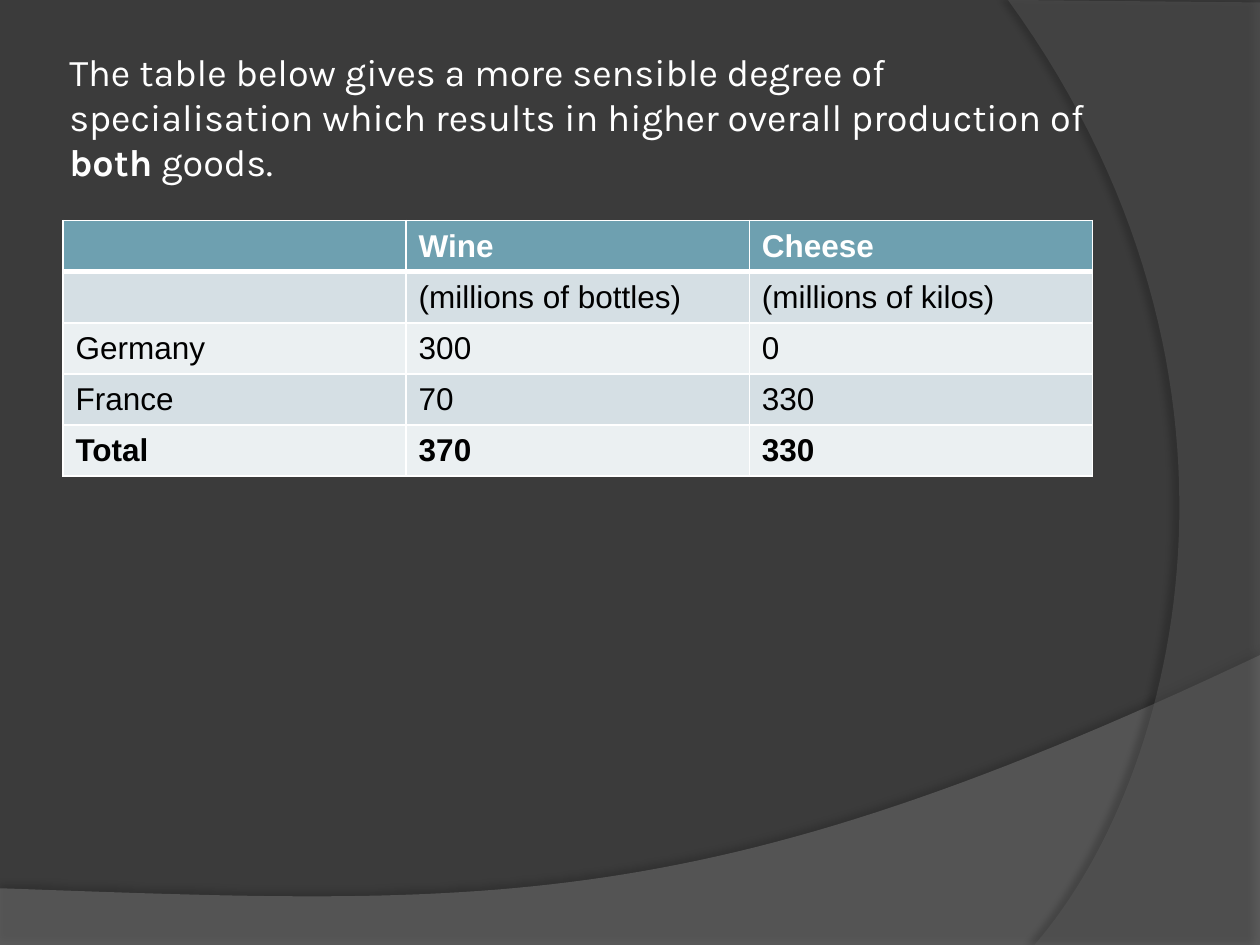
from dataclasses import dataclass

from lxml import etree
from pptx import Presentation
from pptx.dml.color import RGBColor
from pptx.enum import text
from pptx.oxml import ns
from pptx.util import Inches, Pt

COLORS = {
    "background": "3B3B3B", "wave": "7F7F7F", "arc": "5E5E5E", "shadow": "000000",
    "light": "FFFFFF", "dark": "000000",
    "header": "6EA0B0", "odd": "D5DFE4", "even": "EBF0F2",
}
ROWS = [
    ("", "Wine", "Cheese"),
    ("", "(millions of bottles)", "(millions of kilos)"),
    ("Germany", "300", "0"),
    ("France", "70", "330"),
    ("Total", "370", "330"),
]
CURVE_STEPS = 60


@dataclass
class Swoosh:
    """A translucent area bounded by one Bezier curve and straight edges."""
    color: str
    opacity: int
    curve: list[tuple[float, float]]
    corners: list[tuple[float, float]]
    shadow_opacity: int
    shadow_distance: float
    shadow_direction: int


SWOOSHES = [
    Swoosh("wave", 45, [(10, 5.2), (5.59, 7.29), (3.91, 7.19), (0, 7.05)],
           [(0, 7.5), (10, 7.5)], 35, 3.5, 270),
    Swoosh("arc", 40, [(8.21, 7.5), (9.35, 6.19), (10.18, 3), (8, 0)],
           [(10, 0.02), (10, 7.5)], 45, 4, 180),
]


def rgb(name: str) -> RGBColor:
    return RGBColor.from_string(COLORS[name])


def add_element(parent, tag: str, **attributes):
    element = etree.SubElement(parent, ns.qn(tag))
    for key, value in attributes.items():
        element.set(key, str(value))
    return element


def add_color(parent, name: str, opacity: int = 100) -> None:
    color = add_element(parent, "a:srgbClr", val=COLORS[name])
    if opacity < 100:
        add_element(color, "a:alpha", val=opacity * 1000)


def bezier_points(curve: list[tuple[float, float]]) -> list[tuple[float, float]]:
    points = []
    for step in range(CURVE_STEPS + 1):
        t = step / CURVE_STEPS
        weights = ((1 - t) ** 3, 3 * t * (1 - t) ** 2, 3 * t ** 2 * (1 - t), t ** 3)
        points.append(tuple(sum(w * p[axis] for w, p in zip(weights, curve))
                            for axis in (0, 1)))
    return points


def add_swoosh(slide, swoosh: Swoosh, depth: int) -> None:
    outline = [(Inches(x), Inches(y))
               for x, y in bezier_points(swoosh.curve) + swoosh.corners]
    builder = slide.shapes.build_freeform(*outline[0])
    builder.add_line_segments(outline[1:], close=True)
    shape = builder.convert_to_shape()
    shape.line.fill.background()
    shape.fill.solid()
    shape.fill.fore_color.rgb = rgb(swoosh.color)
    properties = shape.element.spPr
    fill_color = properties.find(ns.qn("a:solidFill"))[0]
    add_element(fill_color, "a:alpha", val=swoosh.opacity * 1000)
    shadow = add_element(add_element(properties, "a:effectLst"), "a:outerShdw",
                         blurRad=Pt(4), dist=Pt(swoosh.shadow_distance),
                         dir=swoosh.shadow_direction * 60000, rotWithShape=0)
    add_color(shadow, "shadow", swoosh.shadow_opacity)
    # Keep the backdrop behind the title.
    slide.shapes.element.insert(2 + depth, shape.element)


def add_text(paragraph, content: str, *, font: str, size: float, color: str,
             bold: bool = False) -> None:
    run = paragraph.add_run()
    run.text = content
    run.font.name = font
    run.font.size = Pt(size)
    run.font.bold = bold
    run.font.color.rgb = rgb(color)


def set_borders(cell, bottom: float) -> None:
    properties = cell._tc.get_or_add_tcPr()
    widths = {"a:lnL": 1, "a:lnR": 1, "a:lnT": 1, "a:lnB": bottom}
    for position, (tag, width) in enumerate(widths.items()):
        line = add_element(properties, tag, w=Pt(width))
        add_color(add_element(line, "a:solidFill"), "light")
        properties.insert(position, line)


def fill_title(title) -> None:
    title.left, title.top = Inches(0.5), Inches(0.3)
    title.width, title.height = Inches(8.17), Inches(1.25)
    frame = title.text_frame
    frame.auto_size = text.MSO_AUTO_SIZE.NONE
    frame.word_wrap = True
    frame.vertical_anchor = text.MSO_ANCHOR.MIDDLE
    frame.margin_left = frame.margin_right = Inches(0.05)
    frame.margin_top = frame.margin_bottom = Inches(0.05)
    paragraph = frame.paragraphs[0]
    paragraph.alignment = text.PP_ALIGN.LEFT
    style = {"font": "Karla", "size": 21.6, "color": "light"}
    add_text(paragraph, "The table below gives a more sensible degree of specialisation "
             "which results in higher overall production of ", **style)
    add_text(paragraph, "both", bold=True, **style)
    add_text(paragraph, " goods.", **style)


def add_production_table(slide) -> None:
    table = slide.shapes.add_table(len(ROWS), len(ROWS[0]), Inches(0.5), Inches(1.75),
                                   Inches(8.17), Inches(2.03)).table
    for row_index, row in enumerate(ROWS):
        is_header = row_index == 0
        band = "header" if is_header else "odd" if row_index % 2 else "even"
        for column_index, content in enumerate(row):
            cell = table.cell(row_index, column_index)
            cell.fill.solid()
            cell.fill.fore_color.rgb = rgb(band)
            cell.vertical_anchor = text.MSO_ANCHOR.MIDDLE
            set_borders(cell, bottom=3 if is_header else 1)
            if row_index == 1:
                cell._tc.tcPr.find(ns.qn("a:lnT")).set("w", str(Pt(3)))
            if content:
                add_text(cell.text_frame.paragraphs[0], content, font="Arial", size=18,
                         color="light" if is_header else "dark",
                         bold=is_header or row[0] == "Total")


def main() -> None:
    presentation = Presentation()
    presentation.slide_width, presentation.slide_height = Inches(10), Inches(7.5)
    slide = presentation.slides.add_slide(presentation.slide_layouts[5])
    slide.background.fill.solid()
    slide.background.fill.fore_color.rgb = rgb("background")
    for depth, swoosh in enumerate(SWOOSHES):
        add_swoosh(slide, swoosh, depth)
    fill_title(slide.shapes.title)
    add_production_table(slide)
    presentation.save("out.pptx")


if __name__ == "__main__":
    main()
